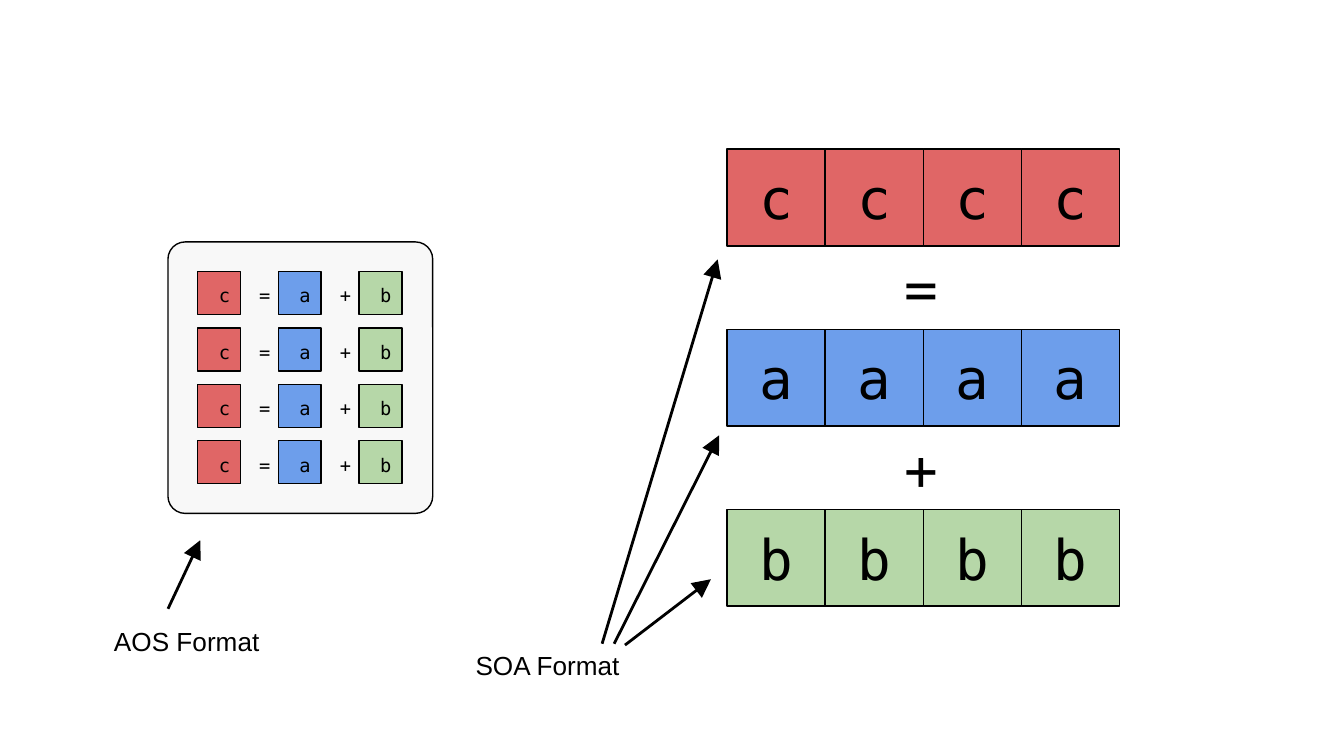
import dataclasses

import lxml.etree
import pptx
import pptx.dml.color
import pptx.enum.shapes
import pptx.oxml.ns
import pptx.util

Inches = pptx.util.Inches
SHAPES = pptx.enum.shapes.MSO_SHAPE


@dataclasses.dataclass(frozen=True)
class Theme:
    ink: str = "000000"
    panel: str = "F8F8F8"
    c: str = "E06666"
    a: str = "6D9EEB"
    b: str = "B6D7A8"
    code_font: str = "DejaVu Sans Mono"
    label_font: str = "Arial"
    large: int = 30
    label: int = 14
    small: int = 10
    outline: float = 0.75
    arrow: float = 1.5


def rgb(value):
    return pptx.dml.color.RGBColor.from_string(value)


def write(frame, text, *, font, size, color):
    frame.word_wrap = True
    for side in ("left", "right", "top", "bottom"):
        setattr(frame, f"margin_{side}", Inches(0.1))
    run = frame.paragraphs[0].add_run()
    run.text = text
    run.font.name = font
    run.font.size = pptx.util.Pt(size)
    run.font.color.rgb = rgb(color)


class Diagram:
    def __init__(self, slide, theme):
        self.slide = slide
        self.theme = theme

    def text(self, text, left, top, width, height, **style):
        box = self.slide.shapes.add_textbox(
            Inches(left), Inches(top), Inches(width), Inches(height))
        write(box.text_frame, text, color=self.theme.ink, **style)

    def large_symbol(self, symbol, left, top):
        self.text(symbol, left, top, 0.46, 0.64,
                  font=self.theme.code_font, size=self.theme.large)

    def small_symbol(self, symbol, left, top):
        self.text(symbol, left, top, 0.21, 0.29,
                  font=self.theme.code_font, size=self.theme.small)

    def caption(self, text, left, top):
        self.text(text, left, top, 1.5, 0.42,
                  font=self.theme.label_font, size=self.theme.label)

    def block(self, left, top, width, height, fill, kind=SHAPES.RECTANGLE):
        block = self.slide.shapes.add_shape(
            kind, Inches(left), Inches(top), Inches(width), Inches(height))
        block.shadow.inherit = False
        block.fill.solid()
        block.fill.fore_color.rgb = rgb(fill)
        block.line.color.rgb = rgb(self.theme.ink)
        block.line.width = pptx.util.Pt(self.theme.outline)
        return block

    def arrow(self, start, end):
        arrow = self.slide.shapes.add_connector(
            pptx.enum.shapes.MSO_CONNECTOR.STRAIGHT,
            *(Inches(value) for value in start + end))
        arrow.line.color.rgb = rgb(self.theme.ink)
        arrow.line.width = pptx.util.Pt(self.theme.arrow)
        qn = pptx.oxml.ns.qn
        lxml.etree.SubElement(arrow.line._get_or_add_ln(), qn("a:tailEnd"),
                              type="triangle", w="lg", len="lg")
        lxml.etree.SubElement(arrow._element.spPr, qn("a:effectLst"))


def draw_soa(diagram):
    # One row of four cells per array
    cell_width, cell_height, row_pitch = 0.73, 0.72, 1.34
    for row, name in enumerate("cab"):
        top = 1.11 + row * row_pitch
        for column in range(4):
            left = 5.41 + column * cell_width
            diagram.block(left, top, cell_width, cell_height,
                          getattr(diagram.theme, name))
            diagram.large_symbol(name, left + 0.14, top + 0.01)
    # Operators between the rows
    for gap, operator in enumerate("=+"):
        diagram.large_symbol(operator, 6.63, 1.79 + gap * row_pitch)
    # Caption and its arrows
    diagram.caption("SOA Format", 3.44, 4.73)
    for start, end in (((4.65, 4.8), (5.29, 4.31)),
                       ((4.57, 4.79), (5.35, 3.24)),
                       ((4.48, 4.79), (5.34, 1.93))):
        diagram.arrow(start, end)


def draw_aos(diagram):
    # Panel around the structures
    panel = diagram.block(1.25, 1.8, 1.97, 2.02, diagram.theme.panel,
                          SHAPES.ROUNDED_RECTANGLE)
    panel.adjustments[0] = 0.065
    # One equation per structure
    for row in range(4):
        top = 2.02 + row * 0.42
        for column, symbol in enumerate("c=a+b"):
            left = 1.47 + column * 0.3
            if symbol.isalpha():
                diagram.block(left, top, 0.32, 0.32,
                              getattr(diagram.theme, symbol))
            diagram.small_symbol(symbol, left + 0.06, top + 0.01)
    # Caption and its arrow
    diagram.caption("AOS Format", 0.75, 4.55)
    diagram.arrow((1.25, 4.53), (1.49, 4.02))


def main():
    deck = pptx.Presentation()
    # Widescreen, 16:9
    deck.slide_width = Inches(10)
    deck.slide_height = deck.slide_width * 9 // 16
    slide = deck.slides.add_slide(deck.slide_layouts[6])
    diagram = Diagram(slide, Theme())
    draw_soa(diagram)
    draw_aos(diagram)
    deck.save("out.pptx")


if __name__ == "__main__":
    main()
